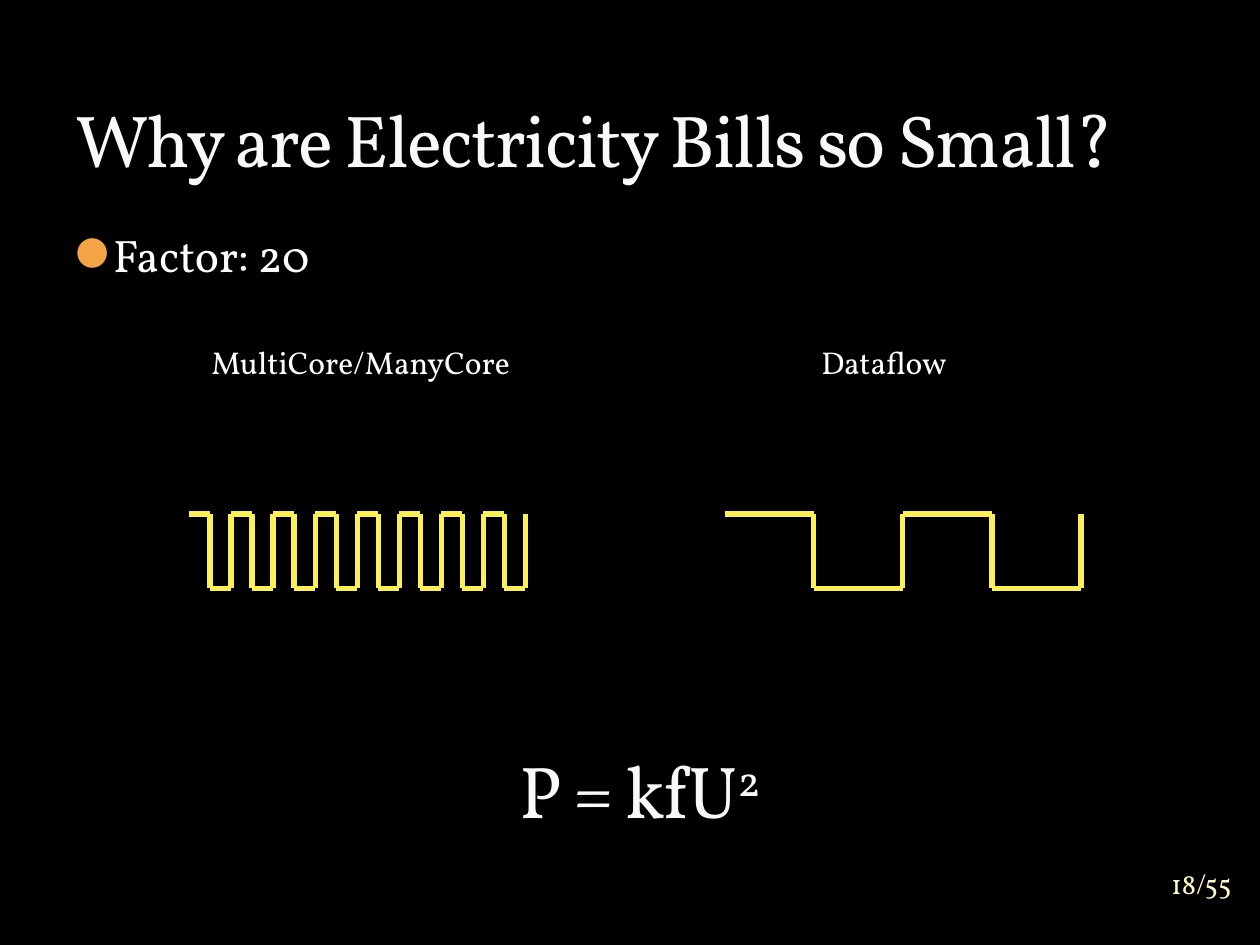
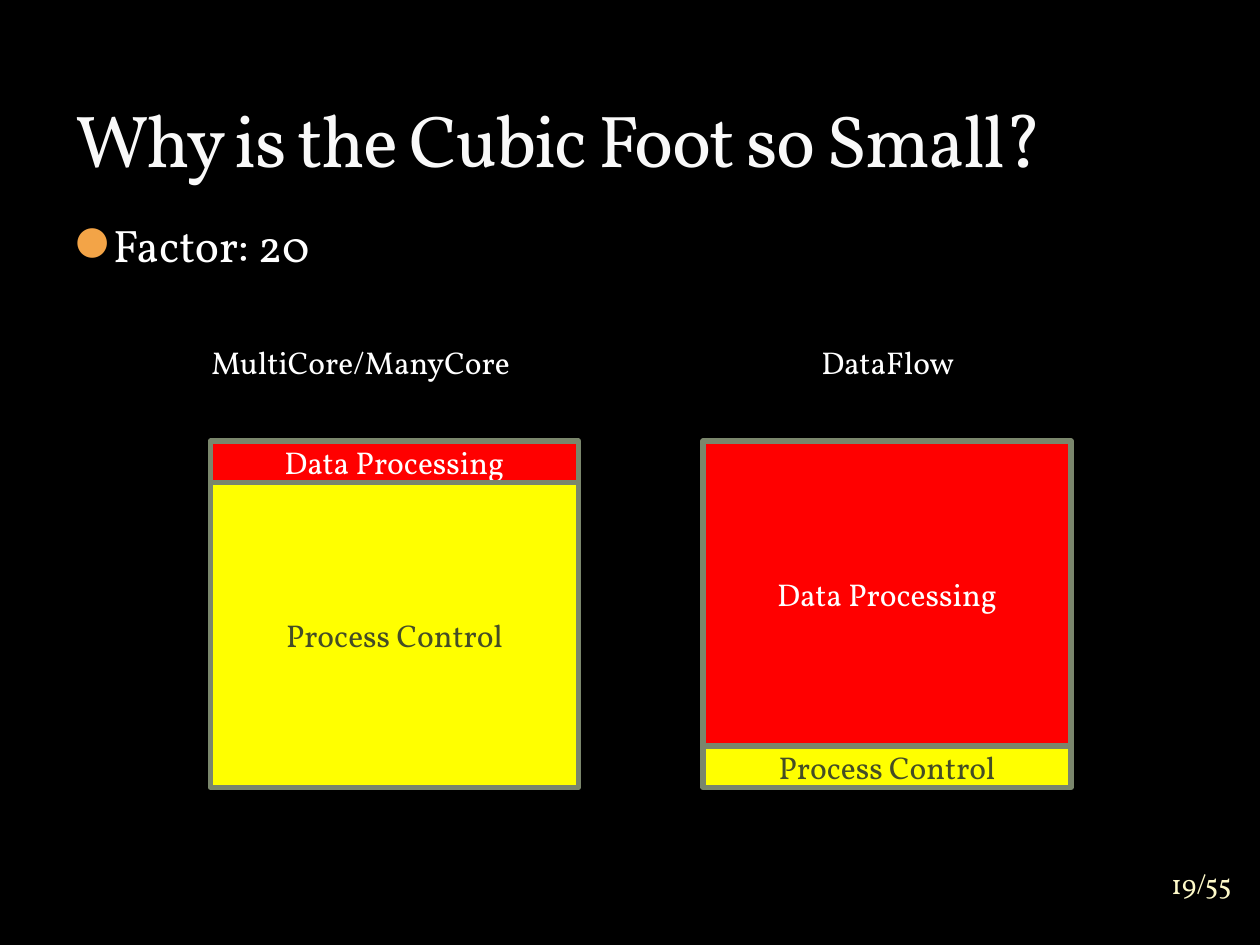
"""Build two slides on why dataflow machines save power and space."""
from lxml import etree
from pptx import Presentation
from pptx.dml.color import RGBColor
from pptx.enum.shapes import MSO_CONNECTOR, MSO_SHAPE
from pptx.enum.text import MSO_ANCHOR, MSO_AUTO_SIZE, PP_ALIGN
from pptx.oxml.ns import qn
from pptx.util import Inches, Pt

STRAIGHT = MSO_CONNECTOR.STRAIGHT
RECTANGLE = MSO_SHAPE.RECTANGLE
TOP, MIDDLE, BOTTOM = MSO_ANCHOR.TOP, MSO_ANCHOR.MIDDLE, MSO_ANCHOR.BOTTOM
LEFT, CENTER = PP_ALIGN.LEFT, PP_ALIGN.CENTER
NO_AUTOFIT = MSO_AUTO_SIZE.NONE

BLACK = RGBColor(0x00, 0x00, 0x00)
WHITE = RGBColor(0xFF, 0xFF, 0xFF)
TITLE_WHITE = RGBColor(0xF9, 0xF9, 0xF9)
CREAM = RGBColor(0xFE, 0xFA, 0xC9)
ORANGE = RGBColor(0xF3, 0xA4, 0x47)
SIGNAL = RGBColor(0xFC, 0xF0, 0x59)
RED = RGBColor(0xFF, 0x00, 0x00)
YELLOW = RGBColor(0xFF, 0xFF, 0x00)
OLIVE = RGBColor(0x44, 0x4D, 0x26)
BORDER = RGBColor(0x7A, 0x86, 0x6C)

FONT = "Vollkorn"
TITLE_STYLE = {"size": 42, "color": TITLE_WHITE, "anchor": BOTTOM, "spacing": -1}
PAGE_COUNT = 55
CHIP_TOP, CHIP_WIDTH, CHIP_HEIGHT, THIN_PART = 3.5, 2.92, 2.75, 0.33
WAVE_HIGH, WAVE_LOW = 4.08, 4.67


def add_span(para, text, size, color, spacing=0, superscript=False):
    """Append one formatted run to a paragraph."""
    span = para.add_run()
    span.text = text
    span.font.name = FONT
    span.font.size = Pt(size)
    span.font.color.rgb = color
    properties = span.font._element
    if spacing:
        properties.set("spc", str(spacing * 100))
    if superscript:
        properties.set("baseline", "30000")


def write_text(shape, text, size=18, color=WHITE, align=LEFT, anchor=TOP,
               spacing=0, superscript=""):
    """Fill a shape with one paragraph and return the paragraph."""
    frame = shape.text_frame
    frame.word_wrap = True
    frame.auto_size = NO_AUTOFIT
    frame.vertical_anchor = anchor
    para = frame.paragraphs[0]
    para.alignment = align
    add_span(para, text, size, color, spacing)
    if superscript:
        add_span(para, superscript, size, color, spacing, superscript=True)
    return para


def add_text(page, text, left, top, width, height, **style):
    """Add a text box and return it with its paragraph."""
    box = page.shapes.add_textbox(
        Inches(left), Inches(top), Inches(width), Inches(height))
    return box, write_text(box, text, **style)


def add_bullet(para):
    """Give a paragraph a hanging orange bullet."""
    properties = para._p.get_or_add_pPr()
    properties.set("marL", str(Inches(0.3)))
    properties.set("indent", str(Inches(-0.3)))
    color = etree.SubElement(properties, qn("a:buClr"))
    etree.SubElement(color, qn("a:srgbClr"), val=str(ORANGE))
    etree.SubElement(properties, qn("a:buSzPct"), val="85000")
    etree.SubElement(properties, qn("a:buFont"), typeface=FONT)
    etree.SubElement(properties, qn("a:buChar"), char="●")


def add_page(deck, number, title, factor_top, dataflow_label):
    """Add a slide with title, factor bullet, column labels and page number."""
    page = deck.slides.add_slide(deck.slide_layouts[5])
    heading = page.shapes.title
    heading.left, heading.top = Inches(0.5), Inches(0.17)
    heading.width, heading.height = Inches(9), Inches(1.33)
    write_text(heading, title, **TITLE_STYLE)
    _, factor = add_text(page, "Factor: 20", 0.5, factor_top, 9, 0.6, size=26)
    add_bullet(factor)
    add_text(page, "MultiCore/ManyCore", 1.58, 2.67, 2.67, 0.4)
    add_text(page, dataflow_label, 6.42, 2.67, 1.5, 0.4)
    footer, _ = add_text(page, f"{number}/{PAGE_COUNT}", 9.2, 6.76, 0.67, 0.5,
                         size=16, color=CREAM, align=CENTER, anchor=MIDDLE)
    frame = footer.text_frame
    frame.margin_left = frame.margin_right = 0
    frame.margin_top = frame.margin_bottom = 0
    return page


def add_wave(page, left, width, cycles):
    """Draw a square wave as a group of straight lines."""
    group = page.shapes.add_group_shape()
    step = width / (2 * cycles)
    points = []
    for index in range(2 * cycles):
        level = WAVE_LOW if index % 2 else WAVE_HIGH
        start = left + index * step
        points += [(start, level), (start + step, level)]
    points.append((left + width, WAVE_HIGH))
    for start, end in zip(points, points[1:]):
        line = group.shapes.add_connector(
            STRAIGHT, *(Inches(value) for value in start + end))
        line.line.color.rgb = SIGNAL
        line.line.width = Pt(3)
        etree.SubElement(line._element.spPr, qn("a:effectLst"))


def add_part(page, text, left, top, height, fill, color):
    """Add one labelled rectangle of a chip."""
    part = page.shapes.add_shape(
        RECTANGLE, Inches(left), Inches(top), Inches(CHIP_WIDTH), Inches(height))
    part.shadow.inherit = False
    part.fill.solid()
    part.fill.fore_color.rgb = fill
    part.line.color.rgb = BORDER
    part.line.width = Pt(3)
    write_text(part, text, color=color, align=CENTER, anchor=MIDDLE)


def add_chip(page, left, processing_height):
    """Split a chip into data processing above process control."""
    add_part(page, "Data Processing", left, CHIP_TOP, processing_height, RED, WHITE)
    add_part(page, "Process Control", left, CHIP_TOP + processing_height,
             CHIP_HEIGHT - processing_height, YELLOW, OLIVE)


def main():
    """Build and save the deck."""
    deck = Presentation()
    deck.slide_width, deck.slide_height = Inches(10), Inches(7.5)
    background = deck.slide_master.background.fill
    background.solid()
    background.fore_color.rgb = BLACK

    power = add_page(deck, 18, "Why are Electricity Bills so Small?", 1.75, "Dataflow")
    add_wave(power, left=1.5, width=2.67, cycles=8)
    add_wave(power, left=5.75, width=2.83, cycles=2)
    add_text(power, "P = kfU", 0.58, 5.33, 9, 1.33, superscript="2",
             align=CENTER, **TITLE_STYLE)

    space = add_page(deck, 19, "Why is the Cubic Foot so Small?", 1.67, "DataFlow")
    add_chip(space, 1.67, THIN_PART)
    add_chip(space, 5.58, CHIP_HEIGHT - THIN_PART)

    deck.save("out.pptx")


if __name__ == "__main__":
    main()
